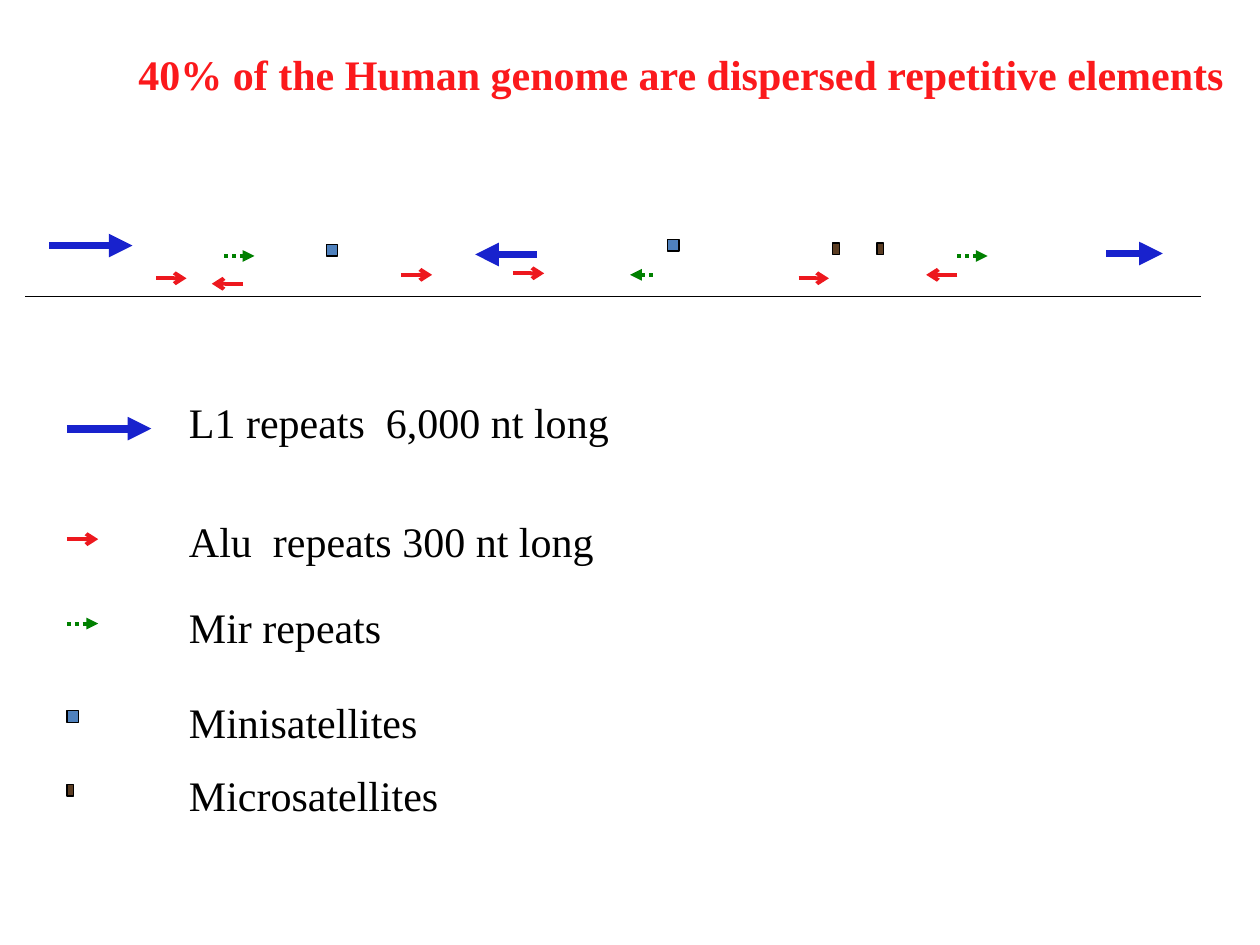
import pptx
import pptx.util
import pptx.dml.color
import pptx.enum.dml
import pptx.enum.shapes
import pptx.enum.text
import pptx.oxml.ns
import lxml.etree

Cm = pptx.util.Cm
Pt = pptx.util.Pt
RGBColor = pptx.dml.color.RGBColor

BLACK = RGBColor(0x00, 0x00, 0x00)
TITLE_RED = RGBColor(0xFB, 0x19, 0x1C)
L1_BLUE = RGBColor(0x18, 0x22, 0xCD)
ALU_RED = RGBColor(0xED, 0x18, 0x1E)
MIR_GREEN = RGBColor(0x00, 0x80, 0x00)
MINI_BLUE = RGBColor(0x4F, 0x81, 0xBD)
MICRO_BROWN = RGBColor(0x5B, 0x3D, 0x23)
DOTTED = pptx.enum.dml.MSO_LINE.ROUND_DOT

deck = pptx.Presentation()
deck.slide_width, deck.slide_height = Cm(25.4), Cm(19.05)
page = deck.slides.add_slide(deck.slide_layouts[6])


def add_line(start, end, height, color, width, head=None, dash=None):
    line = page.shapes.add_connector(
        pptx.enum.shapes.MSO_CONNECTOR.STRAIGHT,
        Cm(start), Cm(height), Cm(end), Cm(height))
    line.line.color.rgb = color
    line.line.width = Pt(width)
    if dash:
        line.line.dash_style = dash
    if head:
        outline = line.line._get_or_add_ln()
        lxml.etree.SubElement(outline, pptx.oxml.ns.qn("a:tailEnd"), type=head)
    lxml.etree.SubElement(line._element.spPr, pptx.oxml.ns.qn("a:effectLst"))


def add_label(text, left, top, width, color=BLACK, bold=False):
    box = page.shapes.add_textbox(Cm(left), Cm(top), Cm(width), Cm(1.27))
    frame = box.text_frame
    frame.word_wrap = False
    frame.auto_size = pptx.enum.text.MSO_AUTO_SIZE.SHAPE_TO_FIT_TEXT
    span = frame.paragraphs[0].add_run()
    span.text = text
    span.font.color.rgb = color
    font_format = {"name": "Times New Roman", "size": Pt(24), "bold": bold}
    for attribute, value in font_format.items():
        setattr(span.font, attribute, value)


# Title and genome line
add_label("40% of the Human genome are dispersed repetitive elements",
          2.54, 0.86, 22.43, TITLE_RED, True)
add_line(0.51, 24.21, 5.97, BLACK, 0.75)

# Repeats as arrows: style, then (start, end, height), legend key last
arrow_families = [
    ((L1_BLUE, 4.5, "triangle"),
     [(0.99, 2.67, 4.95), (22.3, 23.44, 5.11), (10.82, 9.58, 5.13),
      (1.35, 3.05, 8.64)]),
    ((ALU_RED, 2.25, "arrow"),
     [(3.15, 3.76, 5.61), (4.9, 4.27, 5.72), (16.1, 16.71, 5.61),
      (8.08, 8.71, 5.54), (19.3, 18.67, 5.54), (10.34, 10.97, 5.51),
      (1.35, 1.98, 10.87)]),
    ((MIR_GREEN, 2.25, "triangle", DOTTED),
     [(4.52, 5.13, 5.16), (19.3, 19.91, 5.16), (13.16, 12.7, 5.54),
      (1.35, 1.98, 12.57)]),
]
for style, places in arrow_families:
    for start, end, height in places:
        add_line(start, end, height, *style)

# Satellites as small blocks: color, width, then (left, top), legend key last
satellite_families = [
    (MINI_BLUE, 0.23, [(6.58, 4.93), (13.46, 4.83), (1.35, 14.33)]),
    (MICRO_BROWN, 0.13, [(16.79, 4.9), (17.68, 4.9), (1.35, 15.82)]),
]
for color, width, places in satellite_families:
    for left, top in places:
        block = page.shapes.add_shape(
            pptx.enum.shapes.MSO_SHAPE.RECTANGLE,
            Cm(left), Cm(top), Cm(width), Cm(0.23))
        block.shadow.inherit = False
        block.fill.solid()
        block.fill.fore_color.rgb = color
        block.line.color.rgb = BLACK
        block.line.width = Pt(0.75)

# Legend wording
legend = [
    ("L1 repeats  6,000 nt long", 7.87, 8.97),
    ("Alu  repeats 300 nt long", 10.26, 8.66),
    ("Mir repeats", 12.01, 4.39),
    ("Minisatellites", 13.92, 5.11),
    ("Microsatellites", 15.39, 5.54),
]
for text, top, width in legend:
    add_label(text, 3.56, top, width)

deck.save("out.pptx")
